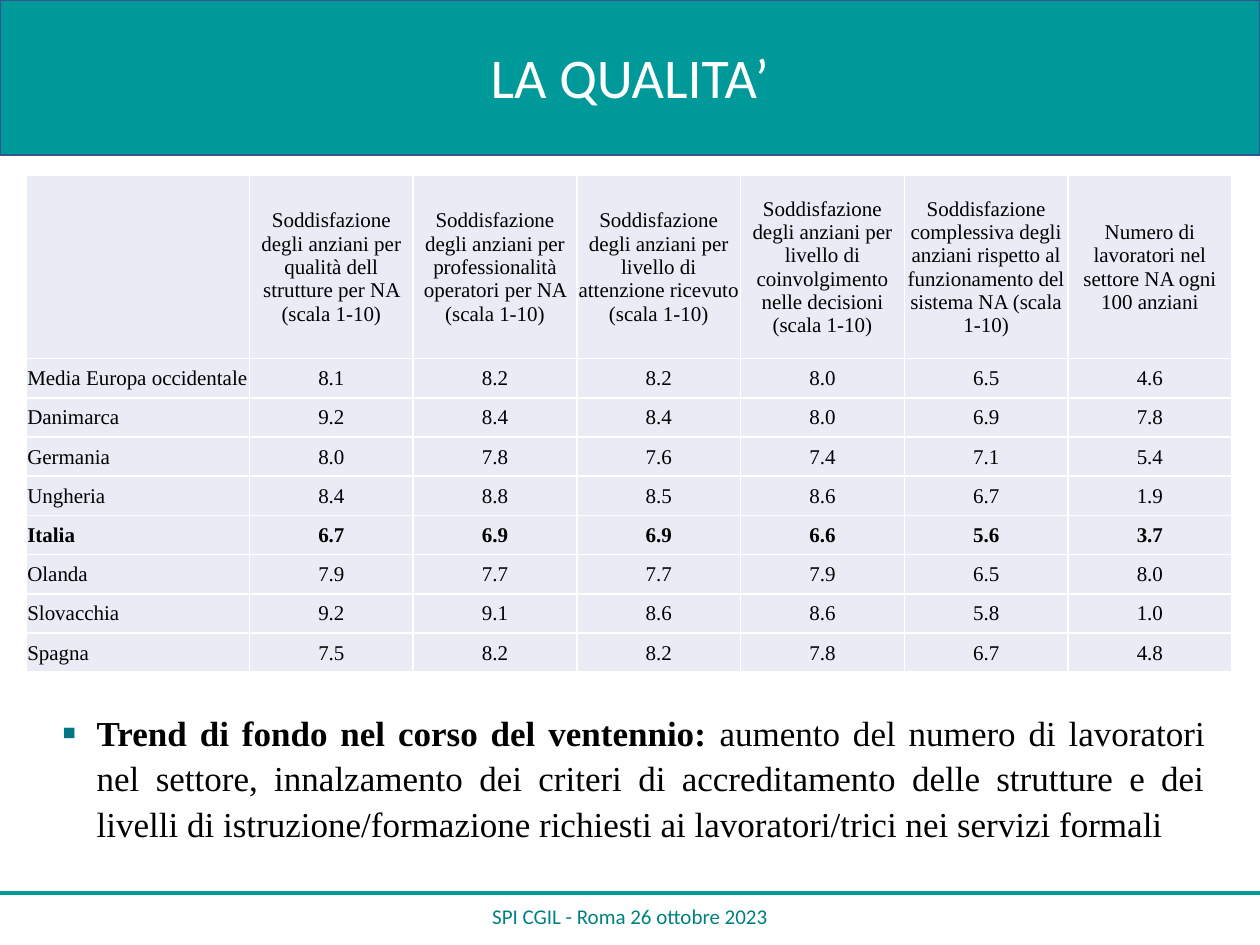
from dataclasses import dataclass

from lxml import etree
from pptx import Presentation
from pptx.dml.color import RGBColor
from pptx.enum import shapes, text
from pptx.oxml.ns import qn
from pptx.util import Cm, Pt


@dataclass(frozen=True)
class Theme:
    teal: str = "009999"
    band_line: str = "325491"
    footer: str = "008080"
    bullet: str = "017783"
    cell: str = "E9EBF5"
    ink: str = "000000"
    white: str = "FFFFFF"
    sans: str = "Calibri"
    serif: str = "Times New Roman"
    title_size: int = 32
    body_size: int = 20
    small_size: int = 12


THEME = Theme()
TITLE = "LA QUALITA’"
FOOTER = "SPI CGIL - Roma 26 ottobre 2023"
HEADER = [
    "",
    "Soddisfazione degli anziani per qualità dell strutture per NA (scala 1-10)",
    "Soddisfazione degli anziani per professionalità operatori per NA (scala 1-10)",
    "Soddisfazione degli anziani per livello di attenzione ricevuto (scala 1-10)",
    "Soddisfazione degli anziani per livello di coinvolgimento nelle decisioni (scala 1-10)",
    "Soddisfazione complessiva degli anziani rispetto al funzionamento del sistema NA (scala 1-10)",
    "Numero di lavoratori nel settore NA ogni 100 anziani",
]
COUNTRIES = [
    ("Media Europa occidentale", 8.1, 8.2, 8.2, 8.0, 6.5, 4.6),
    ("Danimarca", 9.2, 8.4, 8.4, 8.0, 6.9, 7.8),
    ("Germania", 8.0, 7.8, 7.6, 7.4, 7.1, 5.4),
    ("Ungheria", 8.4, 8.8, 8.5, 8.6, 6.7, 1.9),
    ("Italia", 6.7, 6.9, 6.9, 6.6, 5.6, 3.7),
    ("Olanda", 7.9, 7.7, 7.7, 7.9, 6.5, 8.0),
    ("Slovacchia", 9.2, 9.1, 8.6, 8.6, 5.8, 1.0),
    ("Spagna", 7.5, 8.2, 8.2, 7.8, 6.7, 4.8),
]
HIGHLIGHT = "Italia"
TREND = [
    ("Trend di fondo nel corso del ventennio:", True),
    (" aumento del numero di lavoratori nel settore, innalzamento dei criteri di "
     "accreditamento delle strutture e dei livelli di istruzione/formazione richiesti "
     "ai lavoratori/trici nei servizi formali ", False),
]

PAGE_WIDTH, PAGE_HEIGHT = Cm(25.4), Cm(19.05)
BAND_HEIGHT = Cm(3.12)
RULE_TOP = Cm(18)
TABLE_LEFT, TABLE_TOP = Cm(0.53), Cm(3.53)
COLUMN_WIDTHS = [Cm(4.5)] + [Cm(3.3)] * (len(HEADER) - 1)
ROW_HEIGHTS = [Cm(3.7)] + [Cm(0.79)] * len(COUNTRIES)


def colour(value):
    return RGBColor.from_string(value)


def style(font, name, size, ink, bold=False):
    font.name, font.size, font.bold = name, Pt(size), bold
    font.color.rgb = colour(ink)


def set_line(box, content, name, size, ink):
    """Put one centred line of text in the middle of a box."""
    frame = box.text_frame
    frame.text = content
    frame.word_wrap = True
    frame.vertical_anchor = text.MSO_ANCHOR.MIDDLE
    para = frame.paragraphs[0]
    para.alignment = text.PP_ALIGN.CENTER
    style(para.runs[0].font, name, size, ink)


def add_heading(page):
    title = page.shapes.title
    title.left, title.top, title.width, title.height = 0, 0, PAGE_WIDTH, Cm(3.05)
    set_line(title, TITLE, THEME.sans, THEME.title_size, THEME.white)

    band = page.shapes.add_shape(shapes.MSO_SHAPE.RECTANGLE, 0, 0, PAGE_WIDTH, BAND_HEIGHT)
    band.shadow.inherit = False
    band.fill.solid()
    band.fill.fore_color.rgb = colour(THEME.teal)
    band.line.color.rgb = colour(THEME.band_line)
    band.line.width = Pt(1)
    title._element.addprevious(band._element)  # the band lies behind the title


def add_footer(page):
    rule = page.shapes.add_connector(
        shapes.MSO_CONNECTOR.STRAIGHT, 0, RULE_TOP, PAGE_WIDTH, RULE_TOP)
    rule.line.color.rgb = colour(THEME.teal)
    rule.line.width = Pt(2.25)
    etree.SubElement(rule._element.spPr, qn("a:effectLst"))

    width = Cm(8.6)
    box = page.shapes.add_textbox((PAGE_WIDTH - width) // 2, Cm(17.96), width, Cm(1.02))
    set_line(box, FOOTER, THEME.sans, THEME.small_size, THEME.footer)


def fill_cell(cell, content, alignment, bold):
    cell.fill.solid()
    cell.fill.fore_color.rgb = colour(THEME.cell)
    cell.vertical_anchor = text.MSO_ANCHOR.MIDDLE
    cell.margin_left = cell.margin_right = cell.margin_top = Cm(0.02)
    cell.margin_bottom = 0
    para = cell.text_frame.paragraphs[0]
    para.text = content
    para.alignment = alignment
    for span in para.runs:
        style(span.font, THEME.serif, THEME.small_size, THEME.ink, bold)


def add_scores(page):
    rows = [HEADER] + COUNTRIES
    table = page.shapes.add_table(
        len(rows), len(HEADER), TABLE_LEFT, TABLE_TOP,
        sum(COLUMN_WIDTHS), sum(ROW_HEIGHTS)).table
    table.first_row = table.horz_banding = False
    for column, width in zip(table.columns, COLUMN_WIDTHS):
        column.width = width
    for r, (row, height) in enumerate(zip(rows, ROW_HEIGHTS)):
        table.rows[r].height = height
        for c, value in enumerate(row):
            alignment = text.PP_ALIGN.CENTER if c else text.PP_ALIGN.LEFT
            fill_cell(table.cell(r, c), str(value), alignment, row[0] == HIGHLIGHT)


def add_bullet(para, indent):
    properties = para._p.get_or_add_pPr()
    properties.set("marL", str(indent))
    properties.set("indent", str(-indent))
    ink = etree.SubElement(properties, qn("a:buClr"))
    etree.SubElement(ink, qn("a:srgbClr"), val=THEME.bullet)
    etree.SubElement(properties, qn("a:buSzPct"), val="120000")
    etree.SubElement(properties, qn("a:buFont"), typeface=THEME.serif)
    etree.SubElement(properties, qn("a:buChar"), char="▪")


def add_trend(page):
    box = page.shapes.add_textbox(Cm(1), Cm(14.15), Cm(23.55), Cm(3.23))
    box.text_frame.word_wrap = True
    para = box.text_frame.paragraphs[0]
    para.alignment = text.PP_ALIGN.JUSTIFY
    para.line_spacing = 1.08
    para.space_before, para.space_after = Pt(4), Pt(10)
    add_bullet(para, Cm(0.7))
    for content, bold in TREND:
        span = para.add_run()
        span.text = content
        style(span.font, THEME.serif, THEME.body_size, THEME.ink, bold)


def main():
    deck = Presentation()
    deck.slide_width, deck.slide_height = PAGE_WIDTH, PAGE_HEIGHT
    page = deck.slides.add_slide(deck.slide_layouts.get_by_name("Title Only"))
    add_heading(page)
    add_footer(page)
    add_scores(page)
    add_trend(page)
    deck.save("out.pptx")


if __name__ == "__main__":
    main()
